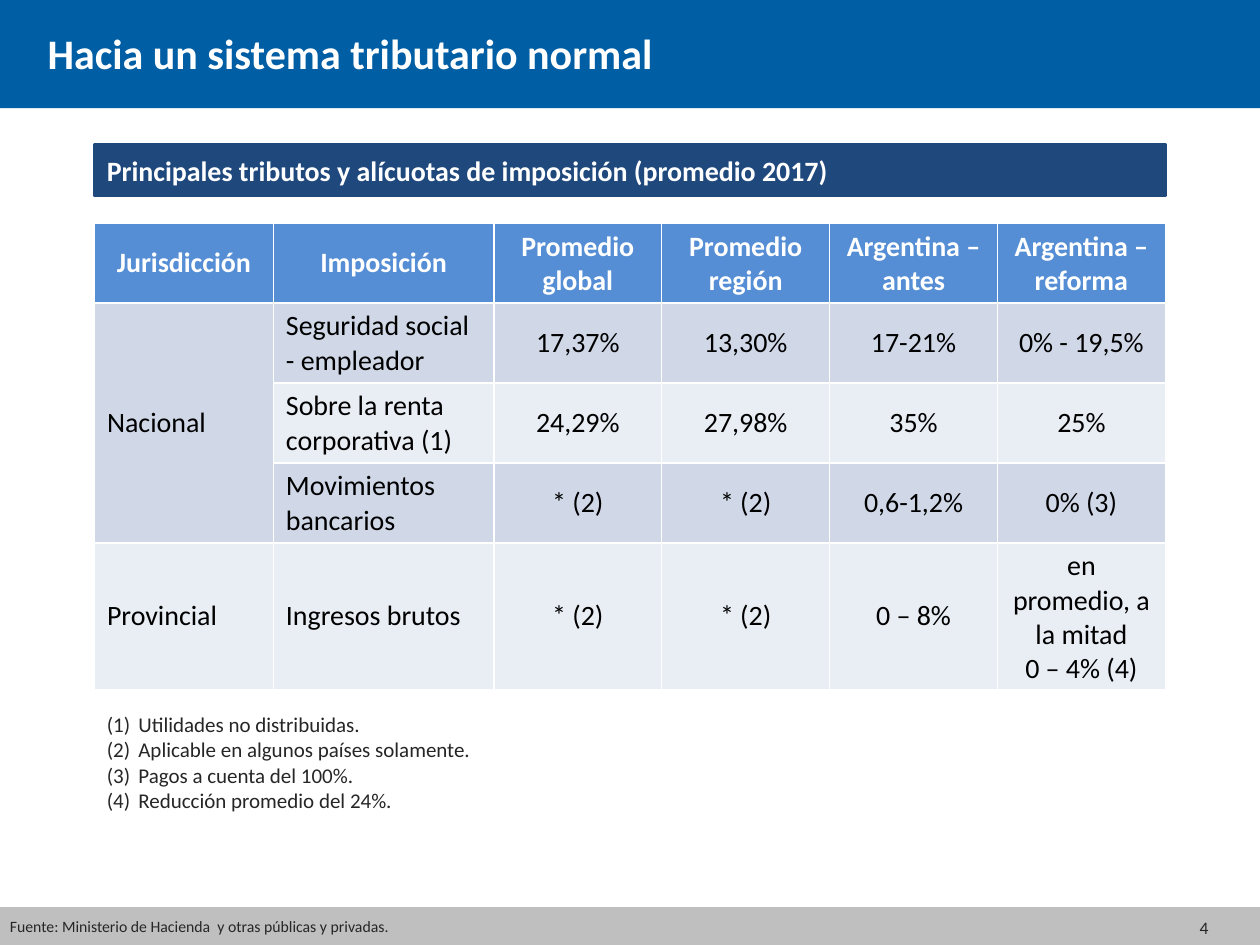
import dataclasses

import pptx
import pptx.dml.color
import pptx.enum.shapes
import pptx.enum.text
import pptx.oxml.ns
import pptx.util
from lxml import etree

ALIGN = pptx.enum.text.PP_ALIGN
ANCHOR = pptx.enum.text.MSO_ANCHOR


@dataclasses.dataclass(frozen=True)
class Theme:
    font: str = "Calibri"
    blue: str = "005EA4"
    navy: str = "1F497D"
    header: str = "558ED5"
    bands: tuple = ("D0D8E8", "E9EDF4")
    gray: str = "BFBFBF"
    white: str = "FFFFFF"
    black: str = "000000"
    ink: str = "262626"
    title: int = 24
    body: int = 16
    notes: int = 12
    number: int = 10
    source: int = 9
    outline: int = 2


def rgb(color):
    return pptx.dml.color.RGBColor.from_string(color)


class SlideBuilder:
    COLUMNS, ROWS = 40, 30

    def __init__(self, prs, theme):
        self.theme = theme
        self.unit_x = prs.slide_width / self.COLUMNS
        self.unit_y = prs.slide_height / self.ROWS
        self.slide = prs.slides.add_slide(prs.slide_layouts[6])

    def box(self, col, row, cols, rows):
        return (int(col * self.unit_x), int(row * self.unit_y),
                int(cols * self.unit_x), int(rows * self.unit_y))

    def fill_text(self, tf, text, size, color, bold=False, align=ALIGN.LEFT):
        tf.word_wrap = True
        tf.text = text
        for p in tf.paragraphs:
            p.alignment = align
            p.font.name = self.theme.font
            p.font.size = pptx.util.Pt(size)
            p.font.bold = bold
            p.font.color.rgb = rgb(color)

    def bar(self, area, fill, outlined=False):
        sp = self.slide.shapes.add_shape(
            pptx.enum.shapes.MSO_SHAPE.RECTANGLE, *self.box(*area))
        sp.shadow.inherit = False
        sp.fill.solid()
        sp.fill.fore_color.rgb = rgb(fill)
        if outlined:
            sp.line.color.rgb = rgb(fill)
            sp.line.width = pptx.util.Pt(self.theme.outline)
        else:
            sp.line.fill.background()
        return sp

    def banner(self, area, text):
        tf = self.bar(area, self.theme.navy, outlined=True).text_frame
        tf.vertical_anchor = ANCHOR.MIDDLE
        self.fill_text(tf, text, self.theme.body, self.theme.white, bold=True)

    def text(self, area, text, size, color, anchor=ANCHOR.TOP, **style):
        tf = self.slide.shapes.add_textbox(*self.box(*area)).text_frame
        tf.vertical_anchor = anchor
        self.fill_text(tf, text, size, color, **style)
        return tf

    def numbered(self, area, items):
        tf = self.text(area, "\n".join(items), self.theme.notes, self.theme.ink)
        indent = pptx.util.Inches(0.25)
        for p in tf.paragraphs:
            pPr = p._p.get_or_add_pPr()
            pPr.set("marL", str(indent))
            pPr.set("indent", str(-indent))
            bullet = etree.Element(pptx.oxml.ns.qn("a:buAutoNum"),
                                   type="arabicParenBoth")
            pPr.insert(0, bullet)

    def table(self, col, row, widths, heights, data, left_columns, merges):
        area = self.box(col, row, sum(widths), sum(heights))
        table = self.slide.shapes.add_table(len(data), len(widths), *area).table
        for column, width in zip(table.columns, widths):
            column.width = int(width * self.unit_x)
        for line, height in zip(table.rows, heights):
            line.height = int(height * self.unit_y)
        for r, values in enumerate(data):
            header = r == 0
            fill = self.theme.header if header else self.theme.bands[(r - 1) % 2]
            color = self.theme.white if header else self.theme.black
            for c, value in enumerate(values):
                cell = table.cell(r, c)
                cell.fill.solid()
                cell.fill.fore_color.rgb = rgb(fill)
                cell.vertical_anchor = ANCHOR.MIDDLE
                left = not header and c < left_columns
                self.fill_text(cell.text_frame, value, self.theme.body, color,
                               bold=header,
                               align=ALIGN.LEFT if left else ALIGN.CENTER)
        for first, last in merges:
            table.cell(*first).merge(table.cell(*last))


TAXES = [
    ["Jurisdicción", "Imposición", "Promedio global", "Promedio región",
     "Argentina – antes", "Argentina – reforma"],
    ["Nacional", "Seguridad social - empleador", "17,37%", "13,30%",
     "17-21%", "0% - 19,5%"],
    ["", "Sobre la renta corporativa (1)", "24,29%", "27,98%", "35%", "25%"],
    ["", "Movimientos bancarios", "* (2)", "* (2)", "0,6-1,2%", "0% (3)"],
    ["Provincial", "Ingresos brutos", "* (2)", "* (2)", "0 – 8%",
     "en promedio, a la mitad\n0 – 4% (4)"],
]

NOTES = [
    "Utilidades no distribuidas.",
    "Aplicable en algunos países solamente.",
    "Pagos a cuenta del 100%.",
    "Reducción promedio del 24%.",
]


def main():
    prs = pptx.Presentation()
    prs.slide_width = pptx.util.Inches(10)
    prs.slide_height = pptx.util.Inches(7.5)
    theme = Theme()
    s = SlideBuilder(prs, theme)

    s.bar((0, 0, 40, 3.44), theme.blue)
    s.bar((0, 28.84, 40, 1.16), theme.gray, outlined=True)
    s.text((29.44, 28.64, 9.32, 1.6), "4", theme.number, theme.ink,
           anchor=ANCHOR.MIDDLE, align=ALIGN.RIGHT)
    s.text((1.12, 0.68, 37.8, 2), "Hacia un sistema tributario normal",
           theme.title, theme.white, bold=True)
    s.banner((3, 4.6, 34, 1.6),
             "Principales tributos y alícuotas de imposición (promedio 2017)")
    s.table(3, 7.08, [5.68, 7] + [5.33] * 4, [2.54] * 4 + [4.64], TAXES,
            left_columns=2, merges=[((1, 0), (3, 0))])
    s.numbered((3, 22.4, 35.92, 3.64), NOTES)
    s.text((-0.08, 28.92, 25.12, 1),
           "Fuente: Ministerio de Hacienda  y otras públicas y privadas.",
           theme.source, theme.ink)

    prs.save("out.pptx")


if __name__ == "__main__":
    main()
